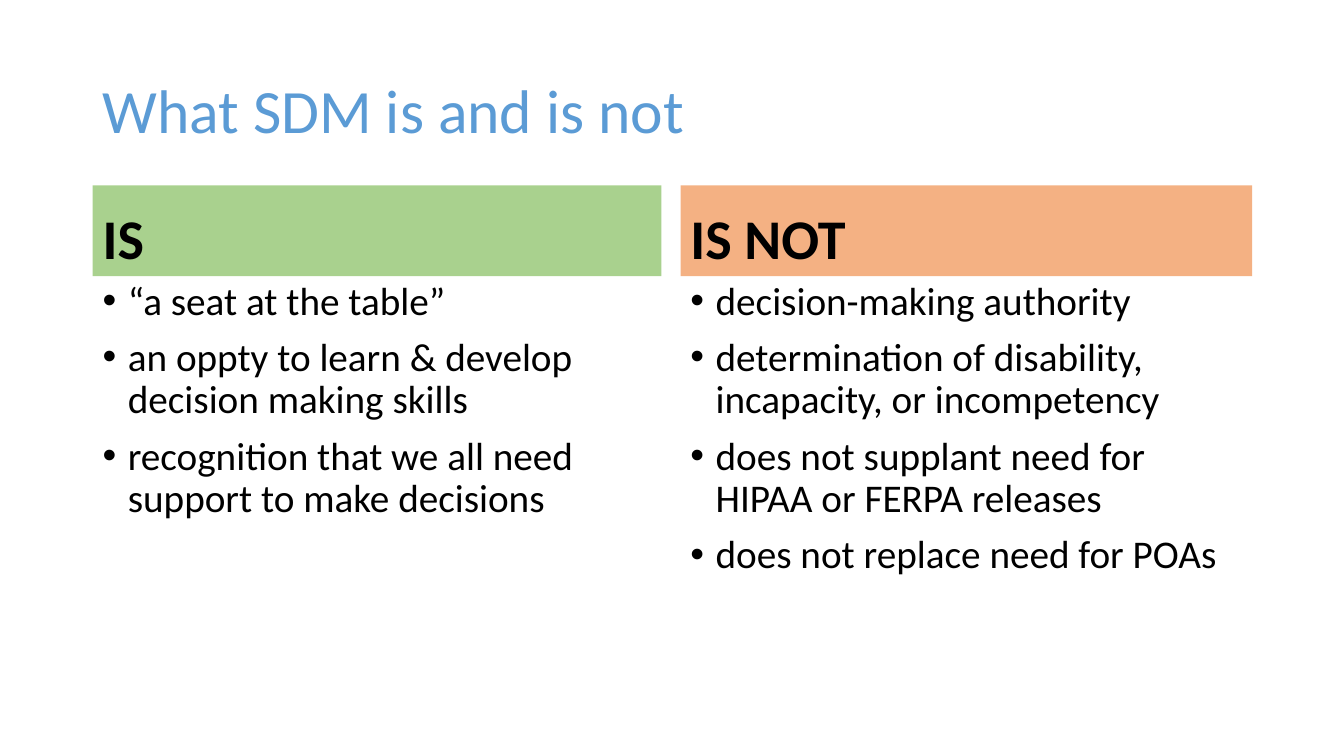
import pptx
import pptx.dml.color
import pptx.enum.shapes
import pptx.enum.text
import pptx.oxml.ns
import pptx.util
from lxml import etree

Inches = pptx.util.Inches
Pt = pptx.util.Pt
RGBColor = pptx.dml.color.RGBColor
Anchor = pptx.enum.text.MSO_ANCHOR

BLUE = RGBColor(0x5B, 0x9B, 0xD5)
GREEN = RGBColor(0xA9, 0xD1, 0x8E)
ORANGE = RGBColor(0xF4, 0xB1, 0x83)
BLACK = RGBColor(0, 0, 0)

# Left, width, header colour, header, bullet points
COLUMNS = [
    (0.92, 5.64, GREEN, "IS", [
        "“a seat at the table”",
        "an oppty to learn & develop decision making skills",
        "recognition that we all need support to make decisions",
    ]),
    (6.75, 5.67, ORANGE, "IS NOT", [
        "decision-making authority",
        "determination of disability, incapacity, or incompetency",
        "does not supplant need for HIPAA or FERPA releases",
        "does not replace need for POAs",
    ]),
]


class SlideBuilder:
    font = "Calibri"
    line_spacing = 0.9
    indent = Inches(0.25)

    def __init__(self, slide):
        self.slide = slide

    def set_text(self, sp, lines, size, color, anchor, bold=False, before=0):
        tf = sp.text_frame
        tf.word_wrap = True
        tf.vertical_anchor = anchor
        tf.text = "\n".join(lines)
        for p in tf.paragraphs:
            p.alignment = pptx.enum.text.PP_ALIGN.LEFT
            p.line_spacing = self.line_spacing
            p.space_before = Pt(before)
            for r in p.runs:
                r.font.name = self.font
                r.font.size = Pt(size)
                r.font.bold = bold
                r.font.color.rgb = color

    def text_box(self, left, top, width, height):
        return self.slide.shapes.add_textbox(
            Inches(left), Inches(top), Inches(width), Inches(height))

    def title(self, text, *box):
        self.set_text(self.text_box(*box), [text], 44, BLUE, Anchor.MIDDLE)

    def header(self, text, fill, left, top, width, height):
        sp = self.slide.shapes.add_shape(
            pptx.enum.shapes.MSO_SHAPE.RECTANGLE,
            Inches(left), Inches(top), Inches(width), Inches(height))
        sp.shadow.inherit = False
        sp.fill.solid()
        sp.fill.fore_color.rgb = fill
        sp.line.fill.background()
        self.set_text(sp, [text], 40, BLACK, Anchor.BOTTOM, bold=True, before=10)

    def bullets(self, lines, *box):
        sp = self.text_box(*box)
        self.set_text(sp, lines, 28, BLACK, Anchor.TOP, before=10)
        qn = pptx.oxml.ns.qn
        for p in sp.text_frame.paragraphs:
            pPr = p._p.get_or_add_pPr()
            pPr.set("marL", str(self.indent))
            pPr.set("indent", str(-self.indent))
            etree.SubElement(pPr, qn("a:buFont"), typeface="Arial")
            etree.SubElement(pPr, qn("a:buChar"), char="•")


def main():
    prs = pptx.Presentation()
    prs.slide_width = Inches(13.33)
    prs.slide_height = Inches(7.5)
    s = SlideBuilder(prs.slides.add_slide(prs.slide_layouts[6]))

    # Title
    s.title("What SDM is and is not", 0.92, 0.4, 11.5, 1.45)

    # Two columns, each a header above its bullet points
    for left, width, fill, heading, points in COLUMNS:
        s.header(heading, fill, left, 1.84, width, 0.9)
        s.bullets(points, left, 2.74, width, 4.03)

    prs.save("out.pptx")


if __name__ == "__main__":
    main()
